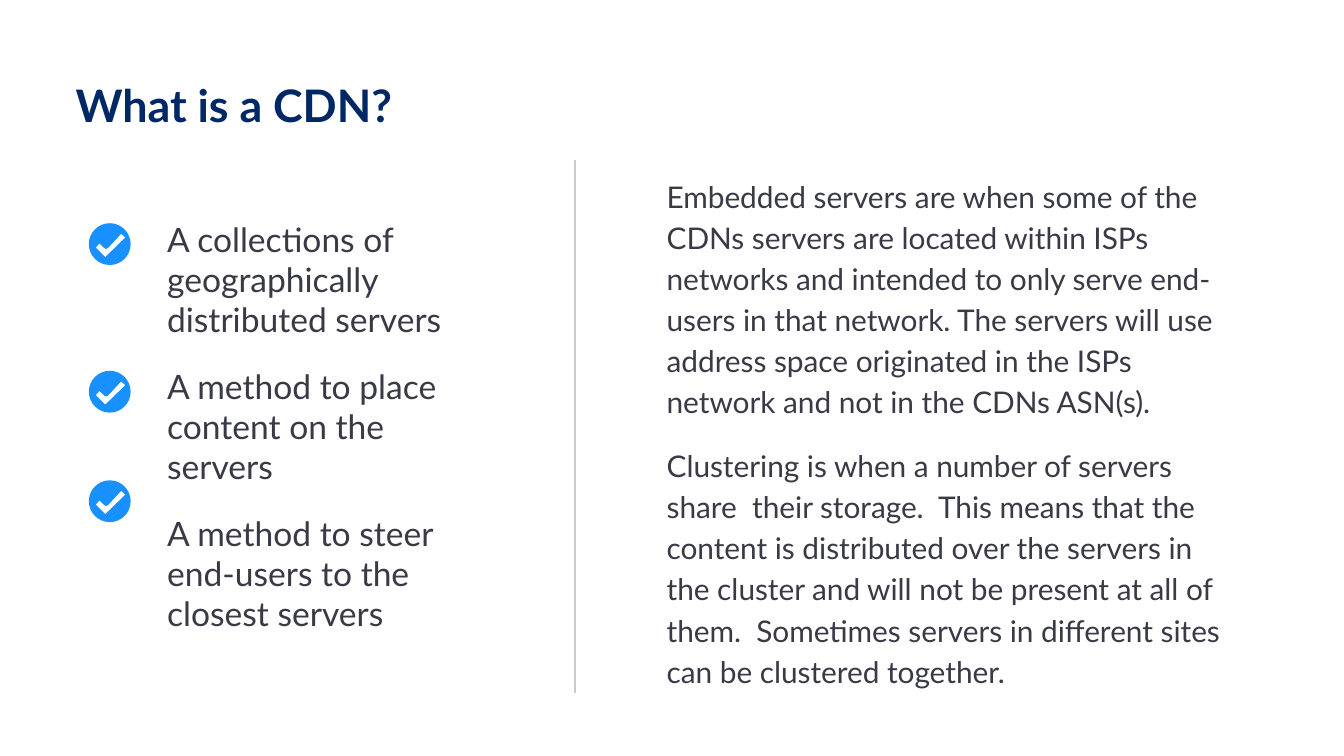
from lxml import etree
from pptx import Presentation
from pptx import util as u
from pptx.dml.color import RGBColor
from pptx.enum import shapes, text
from pptx.oxml import ns

NAVY = RGBColor(0x00, 0x27, 0x66)
SLATE = RGBColor(0x39, 0x3A, 0x45)
BLUE = RGBColor(0x18, 0x90, 0xFF)
GREY = RGBColor(0xCC, 0xCC, 0xCC)

POINTS = [
    "A collections of geographically distributed servers",
    "A method to place content on the servers",
    "A method to steer end-users to the closest servers",
]
NOTES = [
    "Embedded servers are when some of the CDNs servers are located within "
    "ISPs networks and intended to only serve end-users in that network. "
    "The servers will use address space originated in the ISPs network and "
    "not in the CDNs ASN(s).",
    "Clustering is when a number of servers share  their storage.  This means "
    "that the content is distributed over the servers in the cluster and will "
    "not be present at all of them.  Sometimes servers in different sites can "
    "be clustered together.",
]
RING = [(395, 0), (0, 395), (395, 790), (790, 395), (395, 0)]
TICK = [(310, 640), (130, 460), (200, 380), (290, 470), (360, 470),
        (610, 200), (690, 270), (310, 640)]
BENDS = {
    0: [(177, 0), (0, 177)],
    1: [(0, 613), (177, 790)],
    2: [(613, 790), (790, 613)],
    3: [(790, 177), (613, 0)],
    7: [(310, 490), (340, 490)],
}


def apply(item, form):
    for key, val in form.items():
        setattr(item, key, val)


def add_text(slide, area, lines, font, color, gap=0, lead=1.0, pad=(0.25, 0.25),
             anchor=text.MSO_ANCHOR.TOP):
    frame = slide.shapes.add_textbox(*map(u.Cm, area)).text_frame
    side, edge = map(u.Cm, pad)
    apply(frame, dict(word_wrap=True, vertical_anchor=anchor,
                      margin_left=side, margin_right=side,
                      margin_top=edge, margin_bottom=edge))
    for i, line in enumerate(lines):
        para = frame.add_paragraph() if i else frame.paragraphs[0]
        para.line_spacing = lead
        if i:
            para.space_before = u.Pt(gap)
        run = para.add_run()
        run.text = line
        apply(run.font, dict(name="Lato", **font))
        run.font.color.rgb = color


def add_rule(slide, x, top, end):
    rule = slide.shapes.add_connector(
        shapes.MSO_CONNECTOR.STRAIGHT, u.Cm(x), u.Cm(top), u.Cm(x), u.Cm(end))
    rule.line.color.rgb = GREY
    rule.line.width = u.Pt(0.75)
    etree.SubElement(rule._element.spPr, ns.qn("a:effectLst"))


def bend(shape):
    edges = list(shape._element.iter(ns.qn("a:lnTo")))
    for index, pulls in BENDS.items():
        edge = edges[index]
        edge.tag = ns.qn("a:cubicBezTo")
        for spot, (x, y) in enumerate(pulls):
            edge.insert(spot, etree.Element(ns.qn("a:pt"), x=str(x), y=str(y)))


def add_check(slide, x, y):
    pen = slide.shapes.build_freeform(*RING[0], scale=u.Cm(0.001))
    pen.add_line_segments(RING[1:], close=True)
    pen.move_to(*TICK[0])
    pen.add_line_segments(TICK[1:], close=True)
    check = pen.convert_to_shape(u.Cm(x), u.Cm(y))
    bend(check)
    check.shadow.inherit = False
    check.fill.solid()
    check.fill.fore_color.rgb = BLUE
    check.line.fill.background()


def main():
    deck = Presentation()
    apply(deck, dict(slide_width=u.Cm(25.4), slide_height=u.Cm(14.29)))
    slide = deck.slides.add_slide(deck.slide_layouts[6])
    add_text(slide, (1.24, 0.43, 22.88, 2.16), ["What is a CDN?"],
             dict(size=u.Pt(24), bold=True), NAVY, lead=0.9, pad=(0.19, 0.1),
             anchor=text.MSO_ANCHOR.BOTTOM)
    add_text(slide, (12.35, 3.02, 11.38, 10.29), NOTES,
             dict(size=u.Pt(16)), SLATE, gap=12, lead=1.15)
    add_rule(slide, 10.87, 3.02, 13.1)
    add_text(slide, (2.91, 3.88, 6.65, 7.67), POINTS,
             dict(size=u.Pt(18)), SLATE, gap=14)
    for y in (4.22, 7.01, 9.08):
        add_check(slide, 1.68, y)
    deck.save("out.pptx")


if __name__ == "__main__":
    main()
